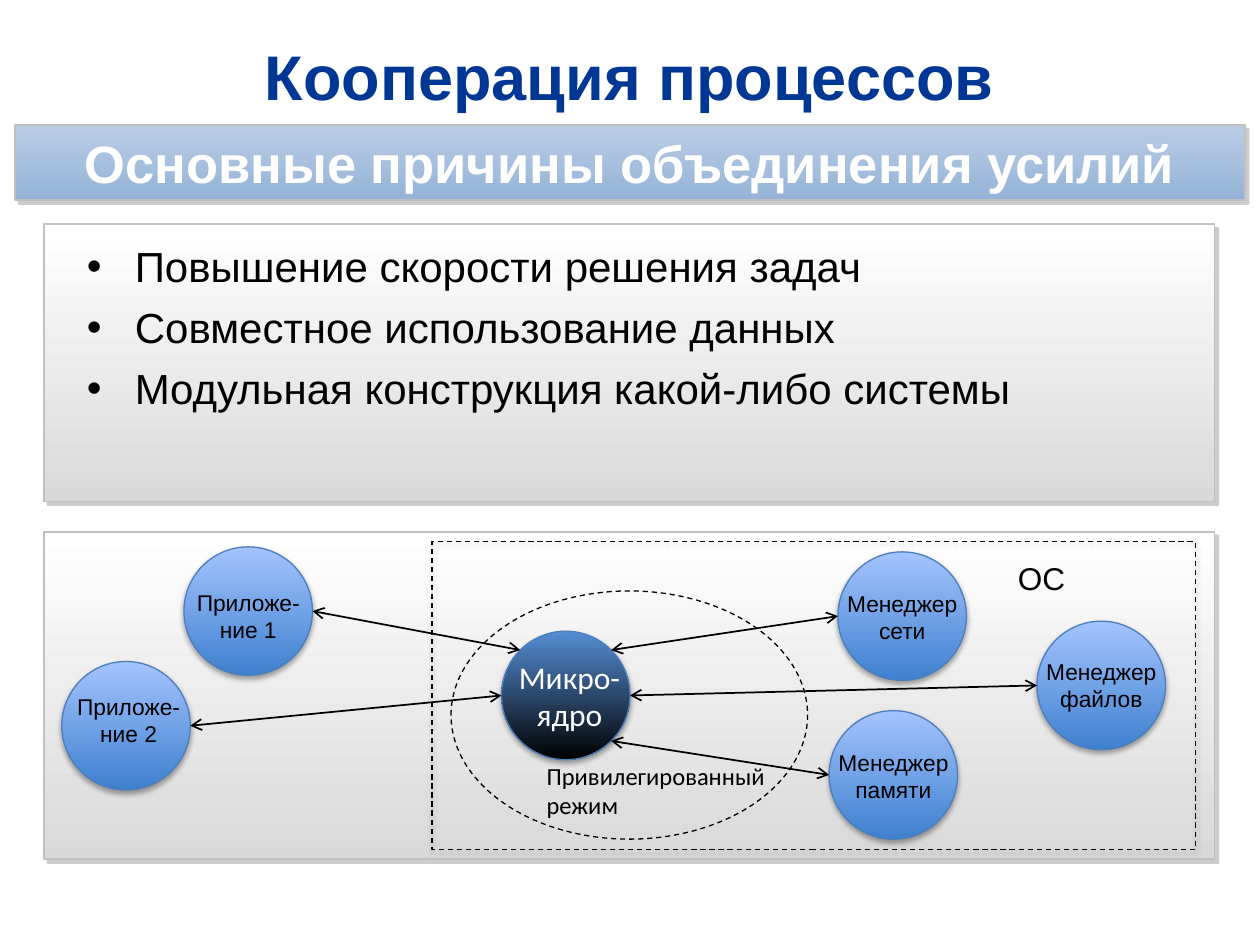
"""Build a slide on process cooperation with a microkernel diagram."""
from dataclasses import dataclass
from math import cos, radians, sin

from lxml.etree import SubElement
from pptx import Presentation
from pptx.dml.color import RGBColor
from pptx.enum.dml import MSO_LINE
from pptx.enum.shapes import MSO_CONNECTOR, MSO_SHAPE as SHAPE
from pptx.enum.text import MSO_ANCHOR as ANCHOR, MSO_AUTO_SIZE as AUTO, PP_ALIGN as ALIGN
from pptx.oxml.ns import qn
from pptx.util import Inches, Pt


@dataclass(frozen=True)
class Theme:
    title: str = "003794"
    ink: str = "000000"
    white: str = "FFFFFF"
    edge: str = "C0C0C0"
    node_edge: str = "4B7EBC"
    banner_fill: tuple = ("B9CDE5", "95B3D7")
    panel_fill: tuple = ("FFFFFF", "D9D9D9")
    node_fill: tuple = ("A4C4FF", "3F80CE")
    kernel_fill: tuple = ("558ED5", "000000")
    hard_shadow: tuple = ("808080", 40, 0, 3, 45)
    soft_shadow: tuple = ("000000", 35, 3.1, 1.8, 90)
    sans: str = "Arial"
    alt: str = "Calibri"
    title_size: int = 36
    banner_size: int = 30
    list_size: int = 24
    label_size: int = 18
    note_size: int = 14
    node_size: int = 13


class Deck:
    """Slide builder on a grid of 100 columns by 75 rows."""

    def __init__(self, theme):
        self.t = theme
        self.prs = Presentation()
        self.prs.slide_width, self.prs.slide_height = self.u(100), self.u(75)
        self.s = self.prs.slides.add_slide(self.prs.slide_layouts[1])

    @staticmethod
    def u(cells):
        return Inches(cells / 10)

    def box(self, at):
        return [self.u(v) for v in at]

    def place(self, sp, at):
        sp.left, sp.top, sp.width, sp.height = self.box(at)

    def set_text(self, sp, lines, size, color, font=None, align=ALIGN.LEFT, bold=False):
        tf = sp.text_frame
        tf.word_wrap = True
        tf.text = "\n".join(lines)
        for p in tf.paragraphs:
            p.alignment = align
            p.font.size, p.font.bold = Pt(size), bold
            p.font.name = font or self.t.sans
            p.font.color.rgb = RGBColor.from_string(color)
        return tf

    def title(self, text, at):
        sp = self.s.shapes.title
        self.place(sp, at)
        tf = self.set_text(sp, [text], self.t.title_size, self.t.title, align=ALIGN.CENTER, bold=True)
        tf.vertical_anchor = ANCHOR.MIDDLE

    def bullets(self, lines, at):
        sp = self.s.placeholders[1]
        self.place(sp, at)
        self.s.shapes._spTree.append(sp._element)
        tf = self.set_text(sp, lines, self.t.list_size, self.t.ink)
        tf.auto_size = AUTO.SHAPE_TO_FIT_TEXT
        for i, p in enumerate(tf.paragraphs):
            p.space_before = Pt(6 if i else 0)
            pPr = p._p.get_or_add_pPr()
            pPr.set("marL", str(self.u(3.8)))
            pPr.set("indent", str(-self.u(3.8)))

    def shape(self, kind, at, fill=None, edge=None, width=1, shadow=None):
        sp = self.s.shapes.add_shape(kind, *self.box(at))
        sp.line.color.rgb = RGBColor.from_string(edge or self.t.edge)
        sp.line.width = Pt(width)
        if fill:
            sp.fill.gradient()
            sp.fill.gradient_angle = 270
            for stop, color, pos in zip(sp.fill.gradient_stops, fill, (0, 1)):
                stop.color.rgb = RGBColor.from_string(color)
                stop.position = pos
        else:
            sp.fill.background()
        sp.shadow.inherit = False
        if shadow:
            self.cast(sp, *shadow)
        return sp

    def cast(self, sp, color, alpha, blur, dist, angle):
        effects = sp._element.spPr.find(qn("a:effectLst"))
        outer = SubElement(effects, qn("a:outerShdw"), blurRad=str(Pt(blur)), dist=str(Pt(dist)),
                           dir=str(angle * 60000), algn="ctr", rotWithShape="0")
        clr = SubElement(outer, qn("a:srgbClr"), val=color)
        SubElement(clr, qn("a:alpha"), val=str(alpha * 1000))

    def panel(self, at, fill=None):
        return self.shape(SHAPE.RECTANGLE, at, fill or self.t.panel_fill, shadow=self.t.hard_shadow)

    def banner(self, text, at):
        sp = self.panel(at, self.t.banner_fill)
        tf = self.set_text(sp, [text], self.t.banner_size, self.t.white, align=ALIGN.CENTER, bold=True)
        tf.vertical_anchor = ANCHOR.MIDDLE
        tf.margin_left = tf.margin_right = self.u(2.4)
        tf.margin_top = tf.margin_bottom = self.u(0.4)

    def circle(self, left, top, fill):
        self.shape(SHAPE.OVAL, (left, top, DIAMETER, DIAMETER), fill,
                   self.t.node_edge, 0.75, self.t.soft_shadow)

    def zone(self, kind, at, shadow=None):
        sp = self.shape(kind, at, None, self.t.ink, 0.75, shadow)
        sp.line.dash_style = MSO_LINE.DASH

    def label(self, lines, at, size, color=None, font=None, align=ALIGN.LEFT):
        sp = self.s.shapes.add_textbox(*self.box(at))
        tf = self.set_text(sp, lines, size, color or self.t.ink, font, align)
        tf.auto_size = AUTO.SHAPE_TO_FIT_TEXT

    def arrow(self, start, end):
        cn = self.s.shapes.add_connector(MSO_CONNECTOR.STRAIGHT, *self.box(start + end))
        cn.line.color.rgb = RGBColor.from_string(self.t.ink)
        cn.line.width = Pt(1)
        spPr = cn._element.spPr
        for tag in ("a:headEnd", "a:tailEnd"):
            SubElement(spPr.find(qn("a:ln")), qn(tag), type="arrow")
        SubElement(spPr, qn("a:effectLst"))


DIAMETER = 10.2
KERNEL = (39.8, 50.1)
NODES = [
    ("Менеджер сети", (66.5, 43.8), (-0.8, 2.5), 180, -45),
    ("Менеджер файлов", (82.3, 49.3), (-0.8, 2.4), 180, 0),
    ("Менеджер памяти", (65.8, 56.4), (-0.8, 2.5), 180, 45),
    ("Приложе-ние 1", (14.6, 43.4), (-0.8, 2.8), 0, 225),
    ("Приложе-ние 2", (4.9, 52.5), (-0.6, 2.0), 0, 180),
]


def rim(corner, degrees):
    """Return the point of a circle's edge at a clockwise angle from the right."""
    r, a = DIAMETER / 2, radians(degrees)
    return corner[0] + r + r * cos(a), corner[1] + r + r * sin(a)


def main():
    t = Theme()
    d = Deck(t)
    d.title("Кооперация процессов", (3.5, 2.6, 92.9, 6.8))
    d.banner("Основные причины объединения усилий", (1.2, 9.9, 97.6, 6))
    d.panel((3.5, 17.8, 92.9, 22))
    d.bullets(["Повышение скорости решения задач", "Совместное использование данных",
               "Модульная конструкция какой-либо системы"], (5.9, 18.6, 87.4, 14.8))
    d.panel((3.5, 42.2, 92.9, 26))

    d.circle(*KERNEL, t.kernel_fill)
    for _, corner, *_ in NODES:
        d.circle(*corner, t.node_fill)
    d.label(["Микро-", "ядро"], (39.8, 51.7, 10.8, 7.1), t.label_size, t.white, t.alt, ALIGN.CENTER)
    d.zone(SHAPE.OVAL, (35.8, 46.9, 28.3, 19.7))
    d.label(["Привилегированный режим"], (42.4, 59.9, 22, 5.7), t.note_size, font=t.alt)
    for text, (x, y), (dx, dy), *_ in NODES:
        d.label([text], (x + dx, y + dy, 11.8, 5.4), t.node_size, align=ALIGN.CENTER)
    d.zone(SHAPE.RECTANGLE, (34.3, 43, 60.6, 24.4), t.soft_shadow)
    d.label(["ОС"], (79.8, 43.9, 7.9, 4), t.label_size)
    for _, corner, _, node_angle, kernel_angle in NODES:
        d.arrow(rim(KERNEL, kernel_angle), rim(corner, node_angle))

    d.prs.save("out.pptx")


if __name__ == "__main__":
    main()
